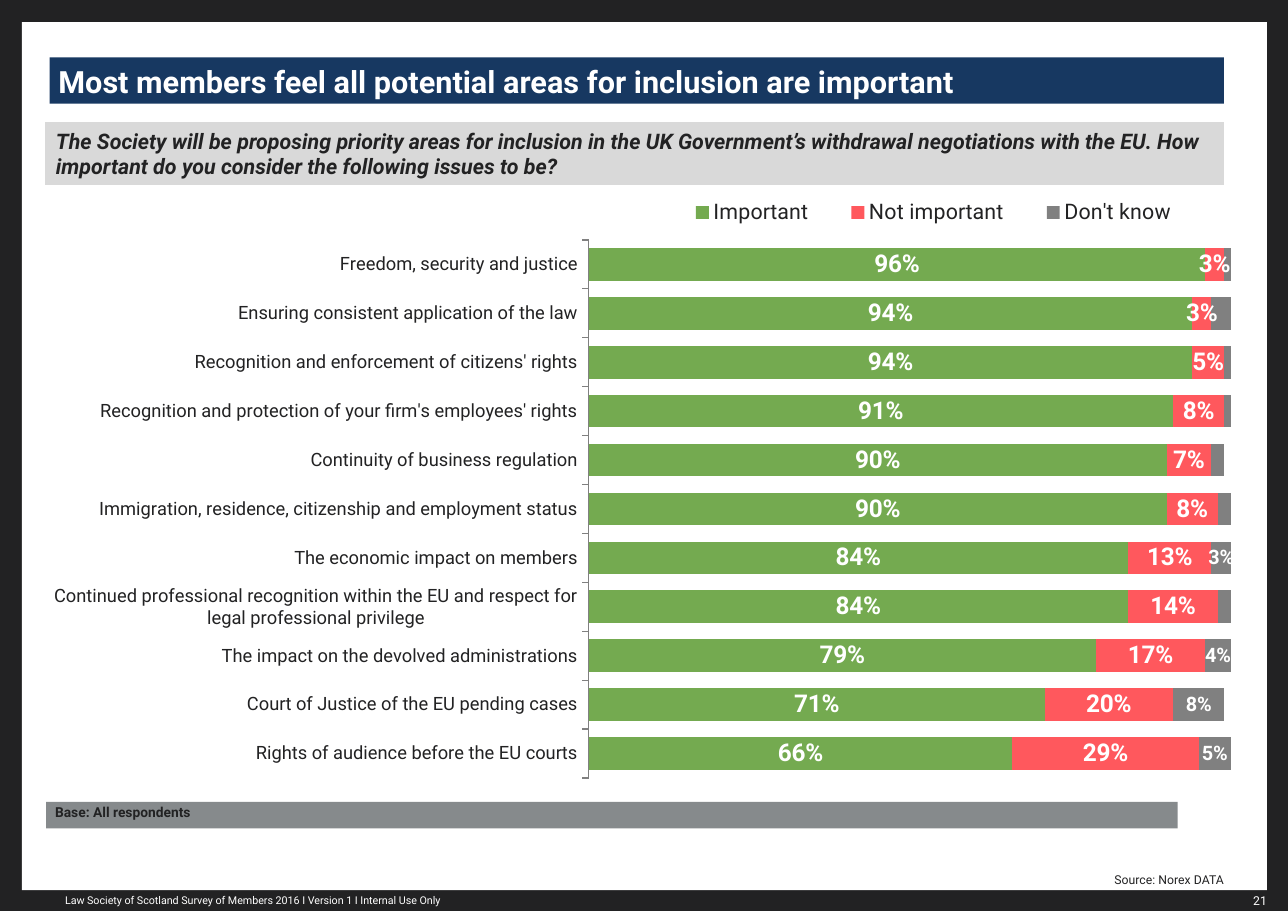
from dataclasses import dataclass

from lxml.etree import SubElement
from pptx import Presentation
from pptx.chart.chart import Chart
from pptx.chart.data import CategoryChartData
from pptx.dml.color import RGBColor
from pptx.enum.chart import (XL_CHART_TYPE, XL_LEGEND_POSITION,
                             XL_TICK_LABEL_POSITION, XL_TICK_MARK)
from pptx.enum.shapes import MSO_SHAPE
from pptx.enum.text import MSO_ANCHOR, PP_ALIGN
from pptx.oxml.ns import qn
from pptx.slide import Slide
from pptx.util import Inches, Pt

FONT = "Roboto"
COLORS = {
    "ink": "222223", "white": "FFFFFF", "navy": "173861", "pale": "D9D9D9",
    "base": "868A8C", "green": "74AA50", "red": "FF585D", "gray": "808080",
}


@dataclass
class Panel:
    """A rectangle, filled or not, with an optional line of text."""
    left: float
    top: float
    width: float
    height: float
    fill: str = ""
    text: str = ""
    size: float = 8
    color: str = "ink"
    bold: bool = False
    italic: bool = False
    align: PP_ALIGN = PP_ALIGN.LEFT
    anchor: MSO_ANCHOR = MSO_ANCHOR.TOP
    inset_x: float = 0
    inset_y: float = 0
    spacing: float = 1.0


@dataclass
class Answer:
    """One series: all values labelled, or only the listed rows."""
    name: str
    percents: list[int]
    color: str
    label_size: int
    labelled_rows: tuple[int, ...] = ()


PANELS = [
    Panel(0.2, 0.2, 11.3, 7.88, "white"),
    Panel(10.95, 8.06, 0.63, 0.22, text="21", color="white", align=PP_ALIGN.RIGHT,
          inset_x=0.08, inset_y=0.04, spacing=1.1),
    Panel(0.59, 8.07, 5.35, 0.2, size=7, color="white", anchor=MSO_ANCHOR.MIDDLE,
          text="Law Society of Scotland Survey of Members 2016 I Version 1 I Internal Use Only"),
    Panel(7.89, 7.85, 3.22, 0.2, text="Source: Norex DATA", align=PP_ALIGN.RIGHT,
          anchor=MSO_ANCHOR.BOTTOM, spacing=1.1),
    Panel(0.45, 0.52, 10.66, 0.42, "navy", size=20, color="white", bold=True,
          text="Most members feel all potential areas for inclusion are important",
          anchor=MSO_ANCHOR.BOTTOM, inset_x=0.08, inset_y=0.04),
    Panel(0.41, 1.11, 10.7, 0.57, "pale", size=14, bold=True, italic=True,
          text="The Society will be proposing priority areas for inclusion in the UK "
               "Government’s withdrawal negotiations with the EU. How important do you "
               "consider the following issues to be?", inset_x=0.1, inset_y=0.05),
    Panel(0.42, 7.28, 10.27, 0.24, "base", "Base: All respondents", 9, bold=True,
          inset_x=0.08, spacing=1.1),
]

ISSUES = [
    "Freedom, security and justice",
    "Ensuring consistent application of the law",
    "Recognition and enforcement of citizens' rights",
    "Recognition and protection of your firm's employees' rights",
    "Continuity of business regulation",
    "Immigration, residence, citizenship and employment status",
    "The economic impact on members",
    "Continued professional recognition within the EU and respect for legal professional privilege",
    "The impact on the devolved administrations",
    "Court of Justice of the EU pending cases",
    "Rights of audience before the EU courts",
]

ANSWERS = [
    Answer("Important", [96, 94, 94, 91, 90, 90, 84, 84, 79, 71, 66], "green", 16),
    Answer("Not important", [3, 3, 5, 8, 7, 8, 13, 14, 17, 20, 29], "red", 16),
    Answer("Don't know", [2, 3, 1, 1, 2, 2, 3, 2, 4, 8, 5], "gray", 13, (6, 8, 9, 10)),
]


def rgb(name: str) -> RGBColor:
    return RGBColor.from_string(COLORS[name])


def style_font(font, size: float, color: str, bold: bool = False, italic: bool = False) -> None:
    font.name, font.size, font.bold, font.italic = FONT, Pt(size), bold, italic
    font.color.rgb = rgb(color)


def draw_panel(slide: Slide, panel: Panel) -> None:
    place = [Inches(n) for n in (panel.left, panel.top, panel.width, panel.height)]
    if panel.fill:
        box = slide.shapes.add_shape(MSO_SHAPE.RECTANGLE, *place)
        box.shadow.inherit = False
        box.fill.solid()
        box.fill.fore_color.rgb = rgb(panel.fill)
        box.line.fill.background()
    else:
        box = slide.shapes.add_textbox(*place)
    if not panel.text:
        return
    frame = box.text_frame
    frame.word_wrap = True
    frame.vertical_anchor = panel.anchor
    frame.margin_left = frame.margin_right = Inches(panel.inset_x)
    frame.margin_top = frame.margin_bottom = Inches(panel.inset_y)
    frame.text = panel.text
    line = frame.paragraphs[0]
    line.alignment = panel.align
    line.line_spacing = panel.spacing
    style_font(line.runs[0].font, panel.size, panel.color, panel.bold, panel.italic)


def manual_layout(after, target: str, x: float, y: float, w: float, h: float) -> None:
    """Put a fixed layout, in fractions of the chart, right after an element."""
    parent = after.getparent()
    for old in parent.findall(qn("c:layout")):
        parent.remove(old)
    layout = SubElement(parent, qn("c:layout"))
    manual = SubElement(layout, qn("c:manualLayout"))
    if target:
        SubElement(manual, qn("c:layoutTarget")).set("val", target)
    for tag in ("xMode", "yMode"):
        SubElement(manual, qn(f"c:{tag}")).set("val", "edge")
    for tag, value in zip("xywh", (x, y, w, h)):
        SubElement(manual, qn(f"c:{tag}")).set("val", str(value))
    after.addnext(layout)


def style_axes(chart: Chart) -> None:
    issues = chart.category_axis
    issues.reverse_order = True
    issues.major_tick_mark = XL_TICK_MARK.OUTSIDE
    issues.tick_label_position = XL_TICK_LABEL_POSITION.LOW
    issues.has_major_gridlines = False
    issues.format.line.color.rgb = rgb("gray")
    issues.format.line.width = Pt(0.75)
    style_font(issues.tick_labels.font, 12, "ink")
    share = chart.value_axis
    share.minimum_scale, share.maximum_scale, share.major_unit = 0, 1, 0.1
    share.has_major_gridlines = False
    share.visible = False


def style_answers(chart: Chart) -> None:
    for series, answer in zip(chart.plots[0].series, ANSWERS):
        series.format.fill.solid()
        series.format.fill.fore_color.rgb = rgb(answer.color)
        labels = series.data_labels
        labels.number_format = "0%"
        labels.number_format_is_linked = False
        labels.show_value = not answer.labelled_rows
        style_font(labels.font, answer.label_size, "white", bold=True)
        for row in answer.labelled_rows:
            style_font(series.points[row].data_label.font, answer.label_size, "white", bold=True)


def draw_chart(slide: Slide) -> None:
    survey = CategoryChartData(number_format="0%")
    survey.categories = ISSUES
    for answer in ANSWERS:
        survey.add_series(answer.name, [p / 100 for p in answer.percents])
    chart = slide.shapes.add_chart(
        XL_CHART_TYPE.BAR_STACKED, Inches(0.38), Inches(1.68),
        Inches(10.82), Inches(5.55), survey).chart
    chart.has_title = False
    style_font(chart.font, 18, "ink")
    bars = chart.plots[0]
    bars.gap_width, bars.overlap, bars.vary_by_categories = 50, 100, False
    style_axes(chart)
    style_answers(chart)
    chart.has_legend = True
    chart.legend.position = XL_LEGEND_POSITION.TOP
    chart.legend.include_in_layout = False
    style_font(chart.legend.font, 14, "ink")
    root = chart.element if hasattr(chart, "element") else chart._chartSpace
    legend_position = root.find(f".//{qn('c:legendPos')}")
    manual_layout(legend_position, "", 0.52, 0.01, 0.46, 0.07)
    plot_area = root.find(f".//{qn('c:plotArea')}")
    manual_layout(plot_area[0], "inner", 0.46, 0.09, 0.54, 0.88)
    plot_area.insert(0, plot_area.find(qn("c:layout")))


def main() -> None:
    deck = Presentation()
    deck.slide_width, deck.slide_height = Inches(11.69), Inches(8.27)
    slide = deck.slides.add_slide(deck.slide_layouts[6])
    slide.background.fill.solid()
    slide.background.fill.fore_color.rgb = rgb("ink")
    for panel in PANELS:
        draw_panel(slide, panel)
    draw_chart(slide)
    deck.save("out.pptx")


if __name__ == "__main__":
    main()
